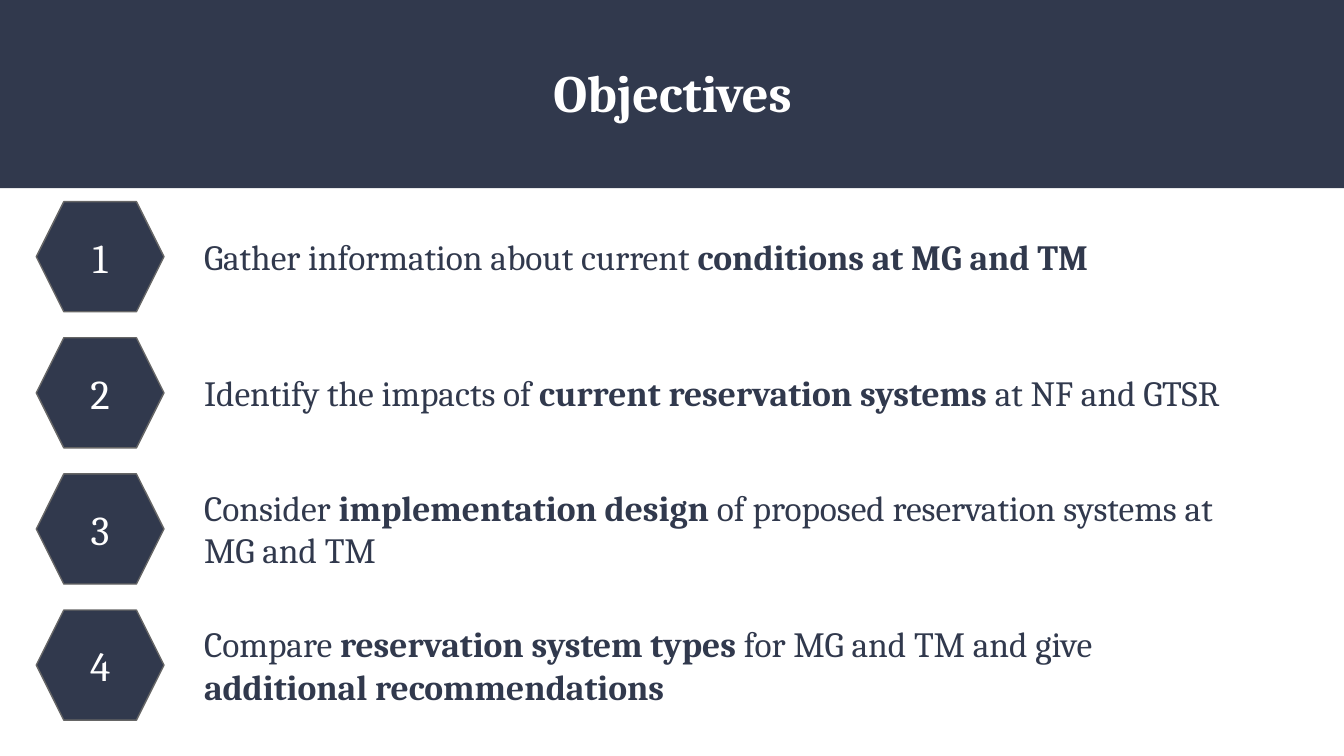
import pptx
import pptx.util
import pptx.dml.color
import pptx.enum.shapes
import pptx.enum.text

Color = pptx.dml.color.RGBColor
Shape = pptx.enum.shapes.MSO_SHAPE
Align = pptx.enum.text.PP_ALIGN
Anchor = pptx.enum.text.MSO_ANCHOR

NAVY = Color(0x31, 0x39, 0x4D)
GRAY = Color(0x66, 0x66, 0x66)
WHITE = Color(0xFF, 0xFF, 0xFF)

GOALS = [
    (1.5, 77.3, 5.2, [("Gather information about current", False),
                      (" conditions at MG and TM", True)]),
    (1.5, 83.1, 5.2, [("Identify the impacts of ", False),
                      ("current reservation systems ", True),
                      ("at NF and GTSR", False)]),
    (-0.1, 78.4, 12.3, [("Consider ", False),
                        ("implementation design", True),
                        (" of proposed reservation systems at MG and TM", False)]),
    (-0.1, 79.6, 8.4, [("Compare ", False),
                       ("reservation system types ", True),
                       ("for MG and TM and give ", False),
                       ("additional recommendations", True)]),
]


class Deck:
    """Draw styled elements on a slide grid with cells of a tenth of an inch."""

    font = "Cambria"
    cell = pptx.util.Inches(0.1)

    def __init__(self, cols, rows):
        self.show = pptx.Presentation()
        self.show.slide_width, self.show.slide_height = self.place(cols, rows)
        self.slide = self.show.slides.add_slide(self.show.slide_layouts[6])

    def place(self, *spans):
        return [round(span * self.cell) for span in spans]

    def shape(self, kind, box, line=None):
        item = self.slide.shapes.add_shape(kind, *self.place(*box))
        item.shadow.inherit = False
        item.fill.solid()
        item.fill.fore_color.rgb = NAVY
        if line is None:
            item.line.fill.background()
        else:
            item.line.color.rgb = line
            item.line.width = pptx.util.Pt(0.75)
        return item

    def label(self, item, parts, size, color, align, anchor):
        frame = item.text_frame
        frame.word_wrap = True
        frame.vertical_anchor = anchor
        frame.margin_left = frame.margin_right = self.cell
        frame.margin_top = frame.margin_bottom = self.cell
        para = frame.paragraphs[0]
        para.alignment = align
        para.font.name = self.font
        para.font.size = pptx.util.Pt(size)
        para.font.color.rgb = color
        for text, bold in parts:
            run = para.add_run()
            run.text = text
            run.font.bold = bold

    def text(self, box, parts, size, color, align=Align.LEFT):
        item = self.slide.shapes.add_textbox(*self.place(*box))
        self.label(item, parts, size, color, align, Anchor.TOP)

    def badge(self, box, mark):
        item = self.shape(Shape.HEXAGON, box, GRAY)
        item.adjustments[0] = 0.25
        self.label(item, [(mark, False)], 22, WHITE, Align.CENTER, Anchor.MIDDLE)


def main():
    deck = Deck(100, 56.25)
    deck.shape(Shape.RECTANGLE, (0, 0, 100, 14))
    deck.text((3.3, 3.5, 93.5, 8.7), [("Objectives", True)], 28, WHITE, Align.CENTER)
    for row, (drop, wide, tall, parts) in enumerate(GOALS):
        top = 15 + 10.13 * row
        deck.badge((2.7, top, 9.5, 8.2), str(row + 1))
        deck.text((14.2, top + drop, wide, tall), parts, 19, NAVY)
    deck.show.save("out.pptx")


if __name__ == "__main__":
    main()
